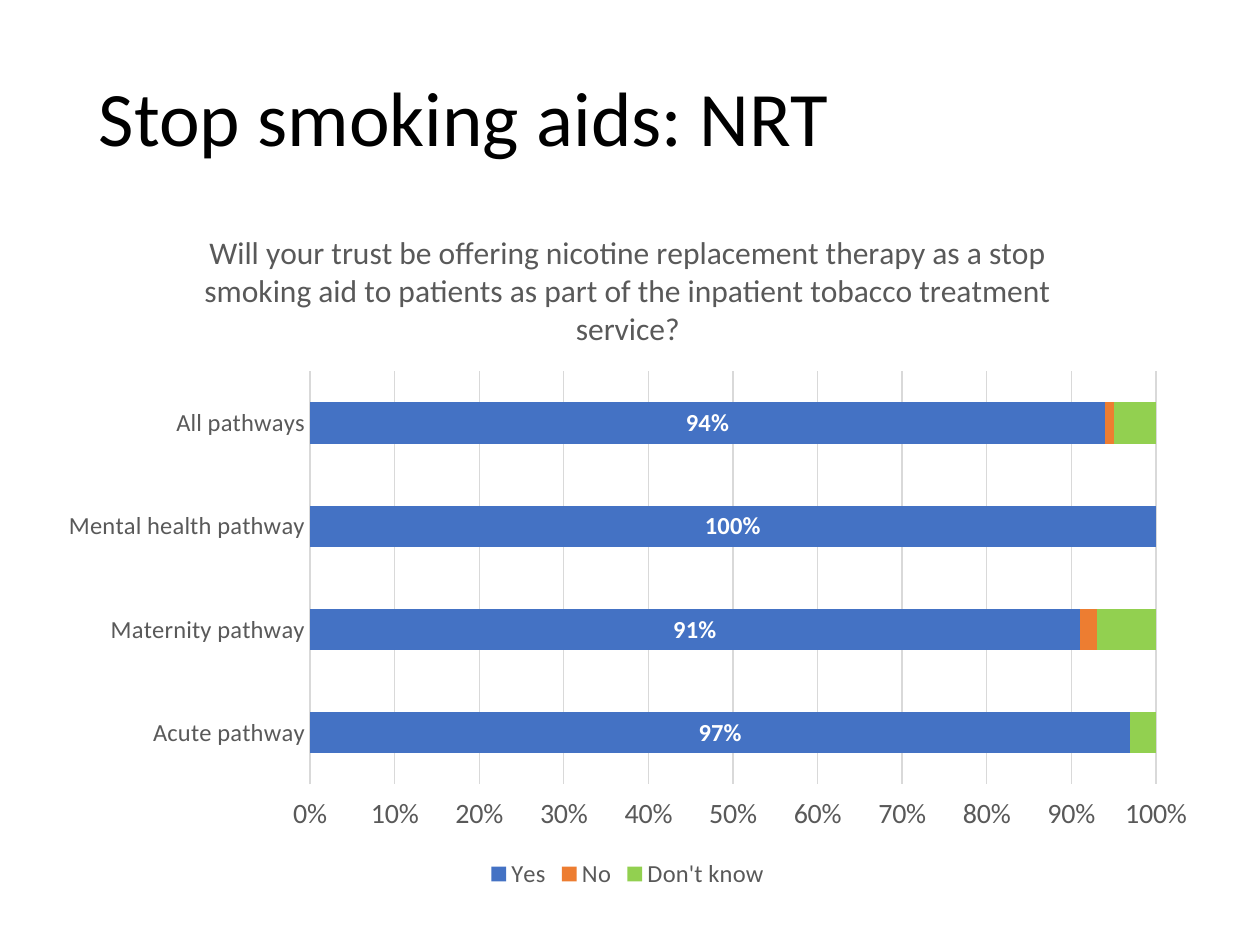
from pptx import Presentation
from pptx import util as u
from pptx.chart import data as cd
from pptx.dml import color
from pptx.enum import chart as ec, text

Pt = u.Pt


def rgb(code):
    return color.RGBColor.from_string(code)


def style(font, size, code, bold=False):
    font.name = "Calibri"
    font.size = Pt(size)
    font.bold = bold
    font.color.rgb = rgb(code)


GREY, RULE = "595959", "D9D9D9"

deck = Presentation()
deck.slide_width, deck.slide_height = Pt(720), Pt(540)
slide = deck.slides.add_slide(deck.slide_layouts[6])

# Heading
box = slide.shapes.add_textbox(Pt(49.5), Pt(11.5), Pt(484), Pt(116))
frame = box.text_frame
frame.word_wrap = True
frame.vertical_anchor = text.MSO_ANCHOR.MIDDLE
para = frame.paragraphs[0]
para.line_spacing = 0.9
run = para.add_run()
run.text = "Stop smoking aids: NRT"
style(run.font, 44, "000000")

# Chart data
data = cd.CategoryChartData(number_format="0%")
data.categories = ["Acute pathway", "Maternity pathway",
                   "Mental health pathway", "All pathways"]
rows = [
    ("Yes", [0.97, 0.91, 1, 0.94], "4472C4"),
    ("No", [0, 0.02, 0, 0.01], "ED7D31"),
    ("Don't know", [0.03, 0.07, 0, 0.05], "92D050"),
]
for name, vals, code in rows:
    data.add_series(name, vals)
chart = slide.shapes.add_chart(
    ec.XL_CHART_TYPE.BAR_STACKED, Pt(26), Pt(116.5), Pt(665.5), Pt(394.5),
    data).chart
style(chart.font, 10, "000000")

# Question above the bars
chart.has_title = True
run = chart.chart_title.text_frame.paragraphs[0].add_run()
run.text = ("Will your trust be offering nicotine replacement therapy as a "
            "stop smoking aid to patients as part of the inpatient tobacco "
            "treatment service?")
style(run.font, 18, GREY)
chart.chart_title.include_in_layout = False

# Bars
plot = chart.plots[0]
plot.gap_width, plot.overlap = 150, 100
plot.vary_by_categories = False
for bar, (name, vals, code) in zip(plot.series, rows):
    bar.format.fill.solid()
    bar.format.fill.fore_color.rgb = rgb(code)
    bar.invert_if_negative = False

# Percentages on the Yes bars
tags = plot.series[0].data_labels
tags.show_value = True
tags.number_format, tags.number_format_is_linked = "0%", False
tags.position = ec.XL_LABEL_POSITION.CENTER
style(tags.font, 14, "FFFFFF", True)

# Axes
cat, val = chart.category_axis, chart.value_axis
for axis, size in ((cat, 14), (val, 16)):
    axis.major_tick_mark = axis.minor_tick_mark = ec.XL_TICK_MARK.NONE
    style(axis.tick_labels.font, size, GREY)
cat.has_major_gridlines = False
val.has_major_gridlines = True
for line in (cat.format.line, val.major_gridlines.format.line):
    line.color.rgb = rgb(RULE)
    line.width = Pt(0.75)
val.format.line.fill.background()
val.minimum_scale, val.maximum_scale, val.major_unit = 0, 1, 0.1
val.tick_label_position = ec.XL_TICK_LABEL_POSITION.LOW
val.tick_labels.number_format = "0%"
val.tick_labels.number_format_is_linked = False

# Legend
chart.has_legend = True
chart.legend.position = ec.XL_LEGEND_POSITION.BOTTOM
chart.legend.include_in_layout = False
style(chart.legend.font, 14, GREY)

deck.save("out.pptx")
